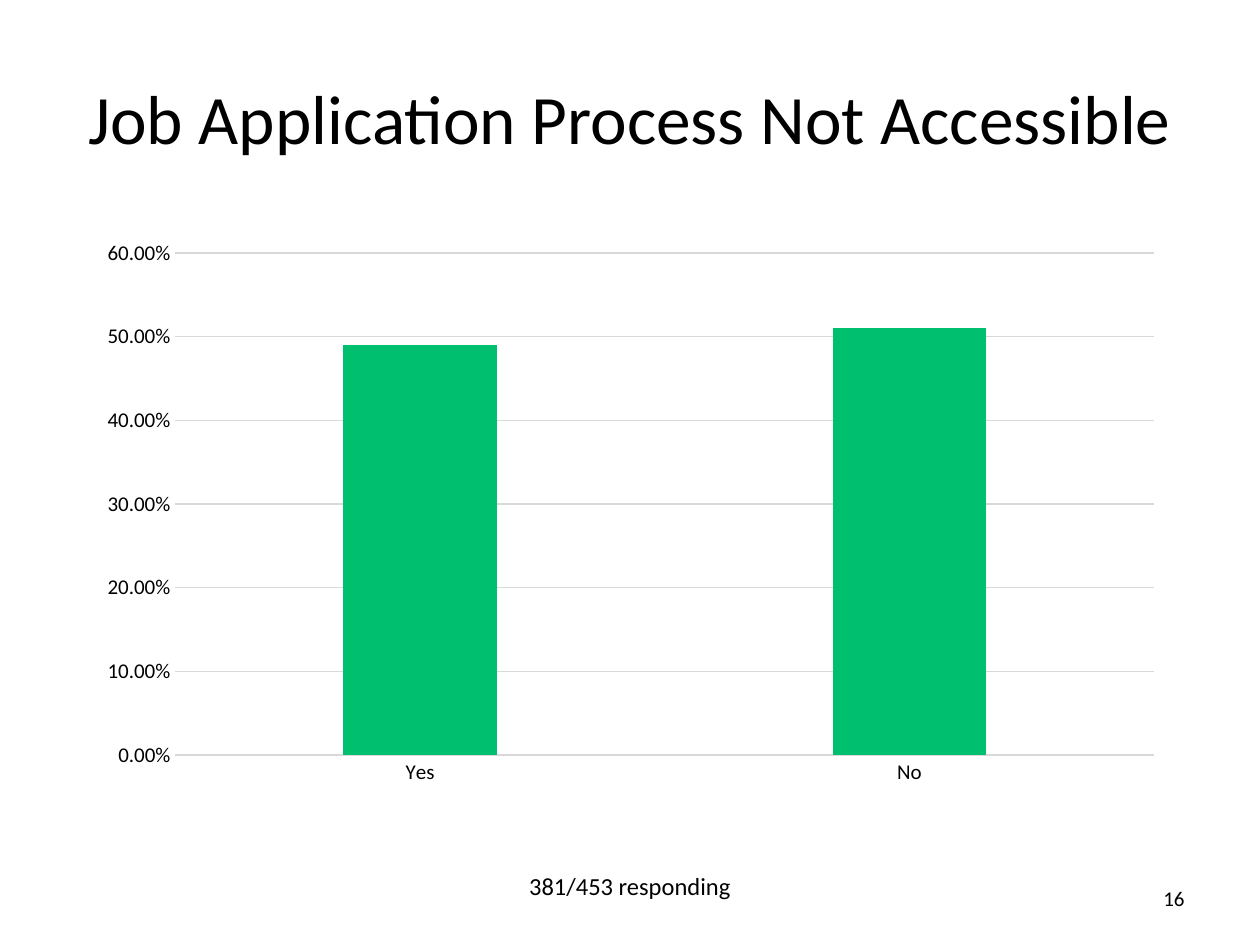
from pptx import Presentation
from pptx import util as u
from pptx.chart import data as cd
from pptx.dml.color import RGBColor
from pptx.enum import chart as ch, text

BLACK = RGBColor(0x00, 0x00, 0x00)
GREEN = RGBColor(0x00, 0xBF, 0x6F)
GRID = RGBColor(0xD9, 0xD9, 0xD9)


class SlideBuilder:
    font = "Calibri"
    color = BLACK

    def __init__(self, s):
        self.s = s

    def style(self, font, size):
        font.name = self.font
        font.size = u.Pt(size)
        font.color.rgb = self.color

    def text(self, content, *, box, size, align=text.PP_ALIGN.CENTER,
             anchor=text.MSO_ANCHOR.MIDDLE, wrap=True, grow=False):
        sp = self.s.shapes.add_textbox(*map(u.Pt, box))
        tf = sp.text_frame
        tf.word_wrap = wrap
        tf.vertical_anchor = anchor
        if grow:
            tf.auto_size = text.MSO_AUTO_SIZE.SHAPE_TO_FIT_TEXT
        p = tf.paragraphs[0]
        p.alignment = align
        r = p.add_run()
        r.text = content
        self.style(r.font, size)
        return sp

    def rule(self, line):
        line.color.rgb = GRID
        line.width = u.Pt(0.75)

    def columns(self, cats, vals, *, box, size):
        data = cd.CategoryChartData(number_format="0.00%")
        data.categories = cats
        data.add_series("Series 1", vals)
        chart = self.s.shapes.add_chart(
            ch.XL_CHART_TYPE.COLUMN_CLUSTERED, *map(u.Pt, box), data).chart
        chart.has_title = False
        chart.has_legend = False
        self.style(chart.font, 10)

        plot = chart.plots[0]
        plot.gap_width = 219
        plot.overlap = -27
        plot.vary_by_categories = False
        fill = plot.series[0].format.fill
        fill.solid()
        fill.fore_color.rgb = GREEN

        for axis in (chart.category_axis, chart.value_axis):
            axis.major_tick_mark = ch.XL_TICK_MARK.NONE
            axis.minor_tick_mark = ch.XL_TICK_MARK.NONE
            self.style(axis.tick_labels.font, size)
        self.rule(chart.category_axis.format.line)
        axis = chart.value_axis
        axis.minimum_scale = 0
        axis.maximum_scale = 0.6
        axis.major_unit = 0.1
        axis.format.line.fill.background()
        axis.has_major_gridlines = True
        self.rule(axis.major_gridlines.format.line)
        axis.tick_labels.number_format = "0.00%"
        axis.tick_labels.number_format_is_linked = False
        return chart


def main():
    prs = Presentation()
    prs.slide_width, prs.slide_height = u.Pt(720), u.Pt(540)
    b = SlideBuilder(prs.slides.add_slide(prs.slide_layouts[6]))
    b.text("Job Application Process Not Accessible",
           box=(36, 21.6, 648, 90), size=39.6)
    b.columns(("Yes", "No"), (0.49, 0.51), box=(49, 131, 623, 324), size=12)
    b.text("381/453 responding", box=(294.5, 494, 131, 24.5), size=14,
           anchor=text.MSO_ANCHOR.TOP, wrap=False, grow=True)
    b.text("16", box=(554.4, 499, 129.6, 28.8), size=12,
           align=text.PP_ALIGN.RIGHT)
    prs.save("out.pptx")


if __name__ == "__main__":
    main()
